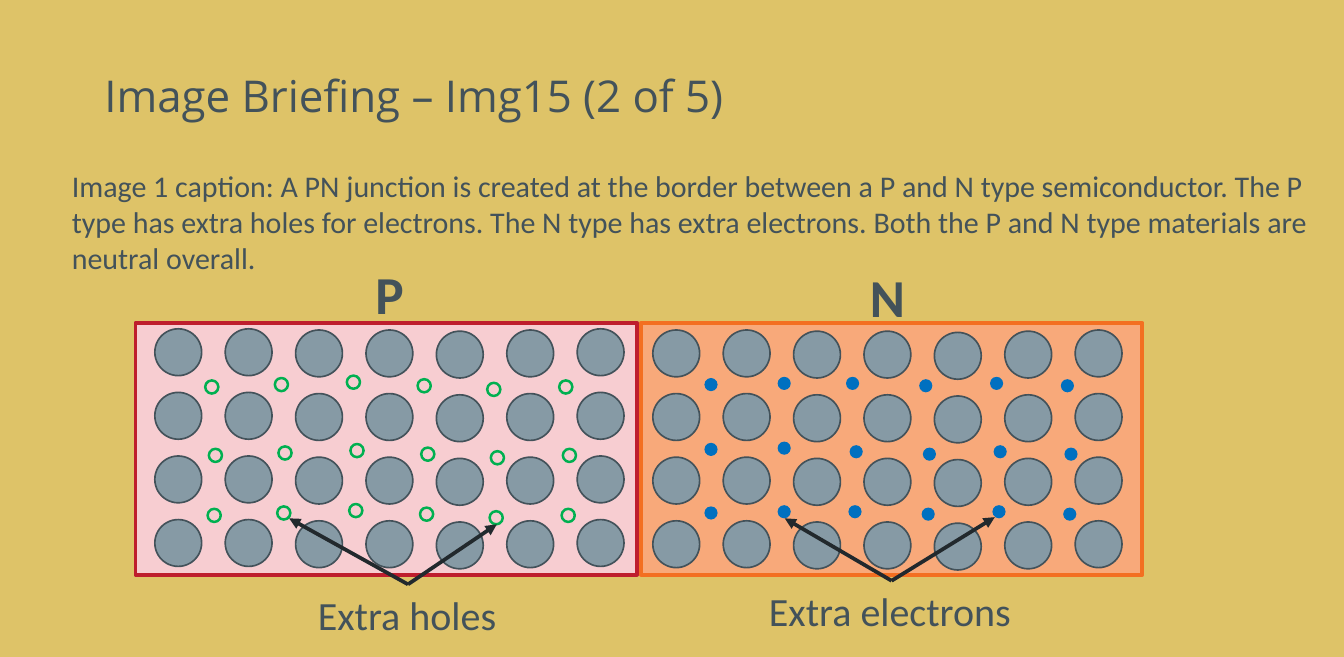
from dataclasses import dataclass

from lxml import etree
from pptx import Presentation
from pptx.dml.color import RGBColor
from pptx.enum.shapes import MSO_CONNECTOR as Connector, MSO_SHAPE as Shape
from pptx.enum.text import MSO_ANCHOR as Anchor, MSO_AUTO_SIZE as AutoSize, PP_ALIGN as Align
from pptx.oxml.ns import qn
from pptx.util import Inches, Pt


@dataclass(frozen=True)
class Theme:
    background: str = "DEC368"
    text: str = "43525A"
    p_fill: str = "F7CDD1"
    p_line: str = "BE1E2D"
    n_fill: str = "F8A97A"
    n_line: str = "F36F21"
    atom: str = "869AA5"
    hole: str = "00B050"
    electron: str = "0070C0"
    arrow: str = "22292D"
    title_font: str = "Open Sans"
    body_font: str = "Calibri"
    title_size: float = 26.3
    caption_size: float = 18
    label_size: float = 24
    region_size: float = 32


class SlideBuilder:
    def __init__(self, page, theme):
        self.page = page
        self.theme = theme
        page.background.fill.solid()
        page.background.fill.fore_color.rgb = RGBColor.from_string(theme.background)

    def style(self, para, font_name, size, bold=False):
        font = para.font
        font.name, font.size, font.bold = font_name, Pt(size), bold
        font.color.rgb = RGBColor.from_string(self.theme.text)

    def title(self, text, left, top, width, height):
        box = self.page.shapes.title
        box.left, box.top = Inches(left), Inches(top)
        box.width, box.height = Inches(width), Inches(height)
        frame = box.text_frame
        frame.text = text
        frame.auto_size = AutoSize.NONE
        frame.vertical_anchor = Anchor.MIDDLE
        para = frame.paragraphs[0]
        para.alignment = Align.LEFT
        para.line_spacing = 0.9
        self.style(para, self.theme.title_font, self.theme.title_size)

    def text(self, text, left, top, width, height, size, bold=False, wrap=False):
        box = self.page.shapes.add_textbox(
            Inches(left), Inches(top), Inches(width), Inches(height))
        frame = box.text_frame
        frame.text = text
        frame.word_wrap = wrap
        frame.auto_size = AutoSize.SHAPE_TO_FIT_TEXT
        self.style(frame.paragraphs[0], self.theme.body_font, size, bold)

    def shape(self, kind, left, top, width, height, fill=None, line=None, weight=1):
        shape = self.page.shapes.add_shape(
            kind, Inches(left), Inches(top), Inches(width), Inches(height))
        shape.shadow.inherit = False
        if fill:
            shape.fill.solid()
            shape.fill.fore_color.rgb = RGBColor.from_string(fill)
        else:
            shape.fill.background()
        if line:
            shape.line.color.rgb = RGBColor.from_string(line)
            shape.line.width = Pt(weight)
        else:
            shape.line.fill.background()

    def region(self, left, fill, line):
        self.shape(Shape.RECTANGLE, left, 2.69, 4.18, 2.1, fill, line, 2.25)

    def atoms(self, left, top):
        """Draw four rows of seven atoms, sagging slightly towards the fifth column."""
        for column, sag in enumerate((0, 0, 0.01, 0.01, 0.02, 0.01, 0)):
            for row in range(4):
                self.shape(Shape.OVAL, left + column * 3.52 / 6, top + sag + row * 0.53,
                           0.39, 0.39, self.theme.atom, self.theme.text)

    def carriers(self, columns, row_shifts, **look):
        """Draw a small circle for every column start and row shift."""
        for left, top in columns:
            for across, down in row_shifts:
                self.shape(Shape.OVAL, left + across, top + down, 0.11, 0.11, **look)

    def arrows(self, start, ends):
        for end in ends:
            arrow = self.page.shapes.add_connector(
                Connector.STRAIGHT, *(Inches(value) for value in (*start, *end)))
            arrow.line.color.rgb = RGBColor.from_string(self.theme.arrow)
            arrow.line.width = Pt(2.25)
            etree.SubElement(arrow.line._get_or_add_ln(), qn("a:tailEnd"), type="triangle")
            etree.SubElement(arrow._element.spPr, qn("a:effectLst"))


def main():
    deck = Presentation()
    deck.slide_width, deck.slide_height = Inches(11.2), Inches(10.95 / 2)
    theme = Theme()
    slide = SlideBuilder(deck.slides.add_slide(deck.slide_layouts[5]), theme)

    slide.title("Image Briefing – Img15 (2 of 5)", 0.77, 0.29, 9.66, 1.06)
    slide.text(
        "Image 1 caption: A PN junction is created at the border between a P and N type "
        "semiconductor. The P type has extra holes for electrons. The N type has extra "
        "electrons. Both the P and N type materials are neutral overall.",
        0.5, 1.35, 10.55, 1.01, theme.caption_size, wrap=True)

    slide.region(1.13, theme.p_fill, theme.p_line)
    slide.region(5.34, theme.n_fill, theme.n_line)
    slide.atoms(1.29, 2.74)
    slide.atoms(5.44, 2.75)

    row_shifts = ((0, 0), (0.03, 0.57), (0.02, 1.07))
    holes = ((1.71, 3.17), (2.29, 3.15), (2.89, 3.13), (3.48, 3.16), (4.06, 3.19), (4.66, 3.17))
    slide.carriers(holes, row_shifts, line=theme.hole, weight=1.5)
    electrons = ((7.05, 3.14), (7.66, 3.16), (8.25, 3.14), (8.84, 3.16))
    slide.carriers(electrons, row_shifts, fill=theme.electron)
    border_electrons = ((5.87, 3.15), (6.48, 3.14))
    slide.carriers(border_electrons, ((0, 0), (0, 0.54), (0, 1.07)), fill=theme.electron)

    slide.text("Extra electrons", 6.31, 4.84, 2.24, 0.5, theme.label_size)
    slide.text("Extra holes", 2.55, 4.87, 1.7, 0.5, theme.label_size)
    slide.text("N", 7.15, 2.15, 0.5, 0.64, theme.region_size, bold=True)
    slide.text("P", 3.03, 2.13, 0.44, 0.64, theme.region_size, bold=True)
    slide.arrows((7.43, 4.84), ((8.29, 4.31), (6.54, 4.32)))
    slide.arrows((3.4, 4.87), ((4.14, 4.37), (2.41, 4.32)))

    deck.save("out.pptx")


if __name__ == "__main__":
    main()
